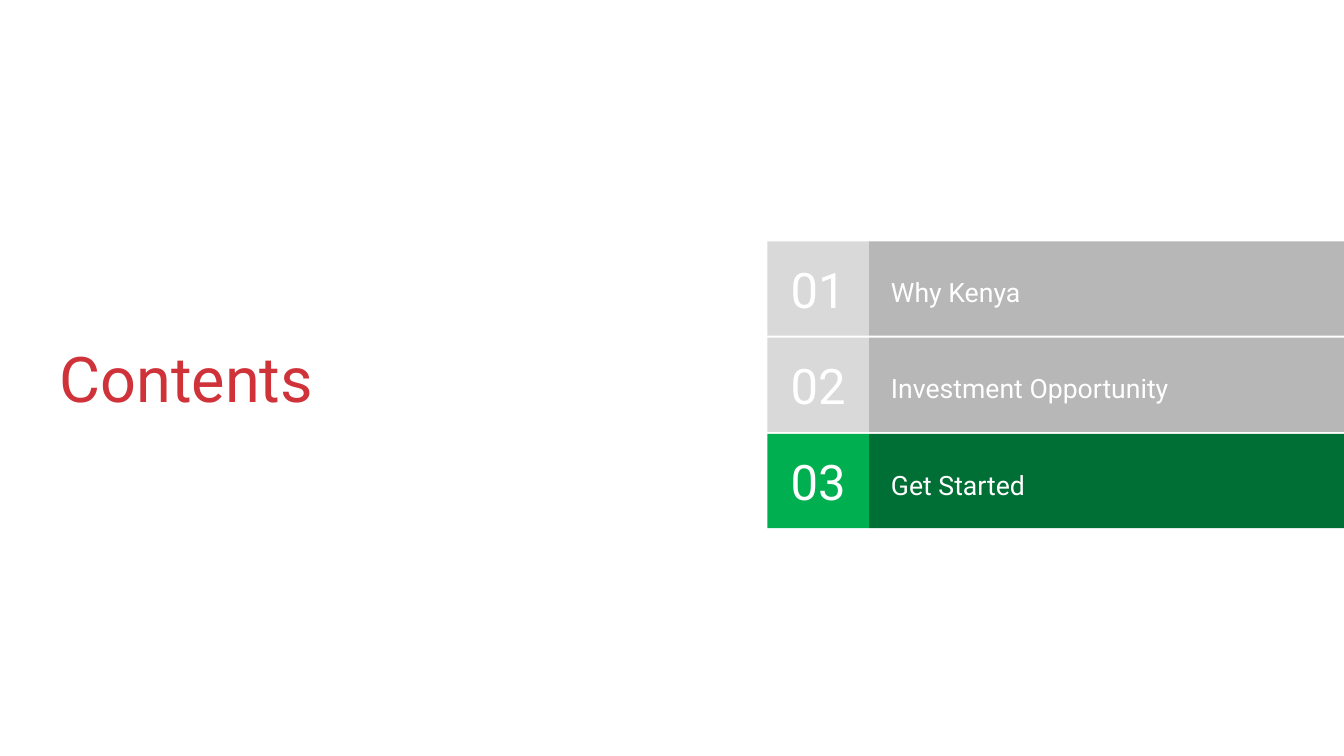
"""Build the contents slide with three numbered sections, the third one active."""
from pptx import Presentation
from pptx.dml.color import RGBColor
from pptx.enum.shapes import MSO_SHAPE
from pptx.enum.text import MSO_ANCHOR, MSO_AUTO_SIZE, PP_ALIGN
from pptx.util import Pt

PIXEL = 9144
INSET = 27
WHITE = "FFFFFF"
ROW_TOP, ROW_HEIGHT, ROW_PITCH = 479, 187, 191
NUMBER_LEFT, NUMBER_WIDTH = 1523, 201
BAR_LEFT, BAR_WIDTH = 1724, 943
LABEL_LEFT, LABEL_WIDTH, LABEL_HEIGHT = 1741, 852, 145
INACTIVE = ("D9D9D9", "B7B7B7")
ACTIVE = ("00B050", "006F35")
SECTIONS = [
    ("Why Kenya", INACTIVE),
    ("Investment Opportunity", INACTIVE),
    ("Get Started", ACTIVE),
]


def color(value):
    """Return the colour for a hex string."""
    return RGBColor.from_string(value)


def write(shape, text, size, text_color, alignment, line_spacing):
    """Fill a shape with one formatted, vertically centred paragraph."""
    frame = shape.text_frame
    frame_format = {
        "word_wrap": True,
        "auto_size": MSO_AUTO_SIZE.NONE,
        "vertical_anchor": MSO_ANCHOR.MIDDLE,
        "margin_left": INSET * PIXEL,
        "margin_top": INSET * PIXEL,
        "margin_right": INSET * PIXEL,
        "margin_bottom": INSET * PIXEL,
    }
    for name, value in frame_format.items():
        setattr(frame, name, value)
    paragraph = frame.paragraphs[0]
    paragraph.alignment = alignment
    paragraph.line_spacing = line_spacing
    paragraph.space_before = Pt(0)
    run = paragraph.add_run()
    run.text = text
    for name, value in {"name": "Roboto", "size": Pt(size), "bold": False}.items():
        setattr(run.font, name, value)
    run.font.color.rgb = color(text_color)


presentation = Presentation()
presentation.slide_width = 2667 * PIXEL
presentation.slide_height = 1500 * PIXEL
slide = presentation.slides.add_slide(presentation.slide_layouts[5])
slide.background.fill.solid()
slide.background.fill.fore_color.rgb = color(WHITE)

title = slide.shapes.title
title_position = {"left": 91, "top": 509, "width": 930, "height": 509}
for name, value in title_position.items():
    setattr(title, name, value * PIXEL)
write(title, "Contents", 90, "CF3339", PP_ALIGN.LEFT, 0.8)

for index, (section, (number_color, bar_color)) in enumerate(SECTIONS):
    top = ROW_TOP + index * ROW_PITCH
    row = slide.shapes.add_group_shape()
    blocks = []
    for left, width, fill_color in (
        (BAR_LEFT, BAR_WIDTH, bar_color),
        (NUMBER_LEFT, NUMBER_WIDTH, number_color),
    ):
        block = row.shapes.add_shape(
            MSO_SHAPE.RECTANGLE, left * PIXEL, top * PIXEL, width * PIXEL, ROW_HEIGHT * PIXEL
        )
        block.shadow.inherit = False
        block.fill.solid()
        block.fill.fore_color.rgb = color(fill_color)
        block.line.fill.background()
        blocks.append(block)
    bar, number = blocks
    write(number, f"{index + 1:02}", 70, WHITE, PP_ALIGN.CENTER, 1.0)

    label = row.shapes.add_textbox(
        LABEL_LEFT * PIXEL, (top + 23) * PIXEL, LABEL_WIDTH * PIXEL, LABEL_HEIGHT * PIXEL
    )
    write(label, section, 38, WHITE, PP_ALIGN.LEFT, 1.15)

presentation.save("out.pptx")
